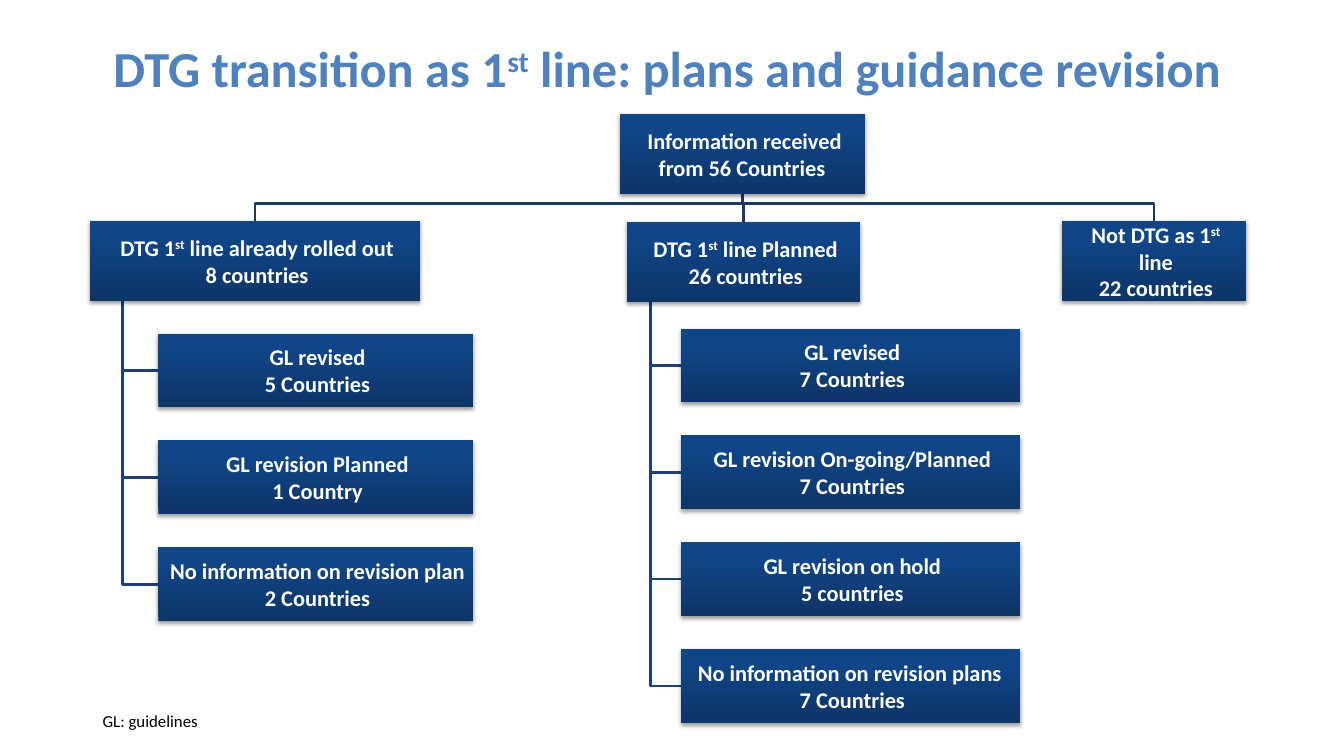
"""Build the slide on DTG transition plans and guidance revision."""
from pptx import Presentation
from pptx.dml.color import RGBColor
from pptx.enum.shapes import MSO_SHAPE
from pptx.enum.text import MSO_ANCHOR, PP_ALIGN
from pptx.oxml import parse_xml
from pptx.oxml.ns import nsdecls, qn
from pptx.util import Inches, Pt

TITLE = "DTG transition as 1^st^ line: plans and guidance revision"
FOOTNOTE = "GL: guidelines"
ROOT = ("Information received from 56 Countries ", 6.15, 1.13, 2.43)
BRANCHES = [
    {"box": ("DTG 1^st^ line already rolled out\n8 countries", 0.89, 2.19, 3.28),
     "left": 1.57, "top": 3.31, "width": 3.12,
     "children": ["GL revised\n5 Countries",
                  "GL revision Planned\n1 Country",
                  "No information on revision plan\n2 Countries"]},
    {"box": ("DTG 1^st^ line Planned\n26 countries", 6.22, 2.2, 2.31),
     "left": 6.75, "top": 3.26, "width": 3.37,
     "children": ["GL revised\n7 Countries",
                  "GL revision On-going/Planned\n7 Countries",
                  "GL revision on hold\n5 countries",
                  "No information on revision plans \n7 Countries"]},
    {"box": ("Not DTG as 1^st^ line\n22 countries", 10.53, 2.19, 1.83),
     "children": []},
]
BRANCH_HEIGHT, CHILD_HEIGHT, CHILD_PITCH = 0.8, 0.73, 1.06
BRANCH_INSETS, CHILD_INSETS = (0.12, 0.04, 0.08, 0.04), (0.1, 0.04, 0.06, 0.04)
BAR_Y = 2.02
GRADIENT = [(0, "0D3568"), (80, "104587"), (100, "0E458A")]


def color(value):
    return RGBColor.from_string(value)


def write(frame, text, size=16, fill="FFFFFF", bold=True, align=PP_ALIGN.CENTER,
          anchor=MSO_ANCHOR.MIDDLE, insets=(0.1, 0.05, 0.1, 0.05)):
    frame.word_wrap = True
    frame.vertical_anchor = anchor
    (frame.margin_left, frame.margin_top,
     frame.margin_right, frame.margin_bottom) = map(Inches, insets)
    for number, line in enumerate(text.split("\n")):
        paragraph = frame.add_paragraph() if number else frame.paragraphs[0]
        paragraph.alignment = align
        for index, part in enumerate(line.split("^")):
            run = paragraph.add_run()
            run.text = part
            run.font.name, run.font.size, run.font.bold = "Calibri", Pt(size), bold
            run.font.color.rgb = color(fill)
            if index % 2:
                run.font._element.set("baseline", "30000")


def add_box(slide, text, left, top, width, height, insets):
    shape = slide.shapes.add_shape(MSO_SHAPE.RECTANGLE, *map(Inches, (left, top, width, height)))
    shape.line.fill.background()
    shape.fill.gradient()
    shape.fill.gradient_angle = 90
    stops = shape._element.spPr.gradFill.gsLst
    for stop in list(stops):
        stops.remove(stop)
    for position, value in GRADIENT:
        stops.append(parse_xml(
            f'<a:gs {nsdecls("a")} pos="{position * 1000}"><a:srgbClr val="{value}"/></a:gs>'))
    shape.shadow.inherit = False
    shape._element.spPr.find(qn("a:effectLst")).append(parse_xml(
        f'<a:outerShdw {nsdecls("a")} blurRad="{Pt(3.1)}" dist="{Pt(1.6)}" dir="5400000" '
        'rotWithShape="0"><a:srgbClr val="000000"><a:alpha val="38000"/></a:srgbClr>'
        '</a:outerShdw>'))
    write(shape.text_frame, text, insets=insets)


def add_elbow(slide, points, line_color):
    corners = [(Inches(x), Inches(y)) for x, y in points]
    builder = slide.shapes.build_freeform(*corners[0])
    builder.add_line_segments(corners[1:], close=False)
    shape = builder.convert_to_shape()
    shape.fill.background()
    shape.line.color.rgb = color(line_color)
    shape.line.width = Pt(2)
    shape.shadow.inherit = False


def main():
    presentation = Presentation()
    presentation.slide_width, presentation.slide_height = Inches(13.33), Inches(7.5)
    slide = presentation.slides.add_slide(presentation.slide_layouts[5])
    title = slide.shapes.title
    title.left, title.top, title.width, title.height = map(Inches, (0.67, 0.31, 11.9, 0.71))
    write(title.text_frame, TITLE, size=36, fill="4F81BD")

    boxes = [(*ROOT, BRANCH_HEIGHT, BRANCH_INSETS)]
    root_x, root_bottom = ROOT[1] + ROOT[3] / 2, ROOT[2] + BRANCH_HEIGHT
    for branch in BRANCHES:
        text, left, top, width = branch["box"]
        boxes.append((text, left, top, width, BRANCH_HEIGHT, BRANCH_INSETS))
        middle, trunk = left + width / 2, left + width / 10
        add_elbow(slide, [(root_x, root_bottom), (root_x, BAR_Y), (middle, BAR_Y),
                          (middle, top)], "193A64")
        for row, child in enumerate(branch["children"]):
            child_top = branch["top"] + row * CHILD_PITCH
            child_middle = child_top + CHILD_HEIGHT / 2
            boxes.append((child, branch["left"], child_top, branch["width"],
                          CHILD_HEIGHT, CHILD_INSETS))
            add_elbow(slide, [(trunk, top + BRANCH_HEIGHT), (trunk, child_middle),
                              (branch["left"], child_middle)], "1C4271")
    for box in boxes:
        add_box(slide, *box)

    footnote = slide.shapes.add_textbox(*map(Inches, (0.92, 7, 1.83, 0.3)))
    write(footnote.text_frame, FOOTNOTE, size=12, fill="000000", bold=False,
          align=PP_ALIGN.LEFT, anchor=MSO_ANCHOR.TOP)
    presentation.save("out.pptx")


if __name__ == "__main__":
    main()
